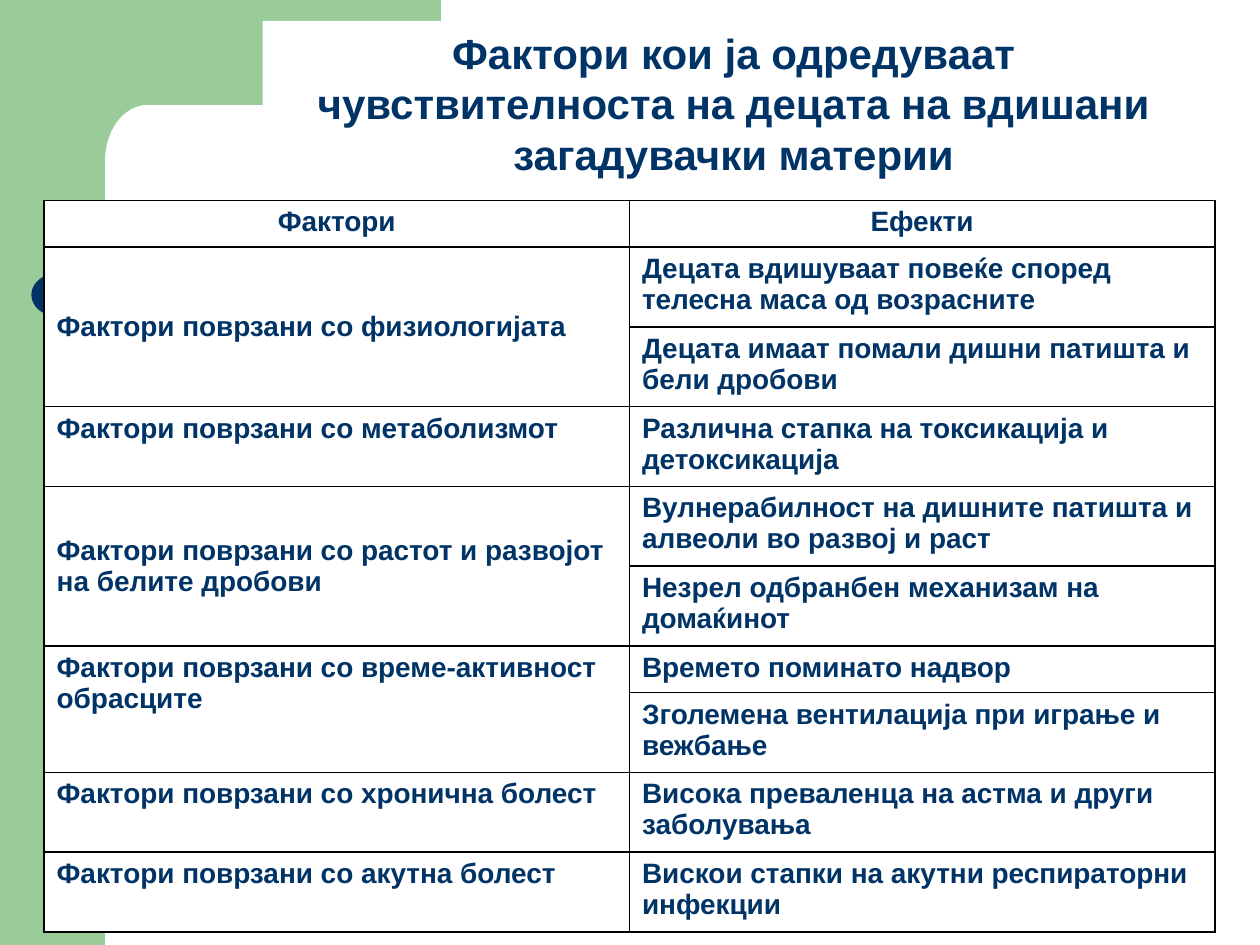
from math import cos, pi, sin

from lxml.etree import SubElement
from pptx import Presentation
from pptx.dml.color import RGBColor
from pptx.enum.shapes import MSO_SHAPE as Shape
from pptx.enum.text import MSO_ANCHOR as Anchor, MSO_AUTO_SIZE as AutoSize, PP_ALIGN as Align
from pptx.oxml.ns import qn
from pptx.util import Pt

GREEN, NAVY, WHITE, BLACK = "99CC99", "003366", "FFFFFF", "000000"
TITLE = "Фактори кои ја одредуваат чувствителноста на децата на вдишани загадувачки материи"
HEADINGS = ("Фактори", "Ефекти")
GROUPS = [
    ("Фактори поврзани со физиологијата", Anchor.MIDDLE,
     ["Децата вдишуваат повеќе според телесна маса од возрасните",
      "Децата имаат помали дишни патишта и бели дробови"]),
    ("Фактори поврзани со метаболизмот", Anchor.TOP,
     ["Различна стапка на токсикација и детоксикација"]),
    ("Фактори поврзани со растот и развојот на белите дробови", Anchor.MIDDLE,
     ["Вулнерабилност на дишните патишта и алвеоли во развој и раст",
      "Незрел одбранбен механизам на домаќинот"]),
    ("Фактори поврзани со време-активност обрасците", Anchor.TOP,
     ["Времето поминато надвор",
      "Зголемена вентилација при играње и вежбање"]),
    ("Фактори поврзани со хронична болест", Anchor.TOP,
     ["Висока преваленца на астма и други заболувања"]),
    ("Фактори поврзани со акутна болест", Anchor.TOP,
     ["Вискои стапки на акутни респираторни инфекции"]),
]
SHORT_ROW, TALL_ROW = 26.7, 45.6
ONE_LINE = {HEADINGS[1], "Времето поминато надвор"}


def color(value):
    """Turn a hex string into a colour."""
    return RGBColor.from_string(value)


def paint(shape, fill):
    """Give a shape a plain fill with no line and no shadow."""
    shape.shadow.inherit = False
    shape.fill.solid()
    shape.fill.fore_color.rgb = color(fill)
    shape.line.fill.background()


def write(frame, text, size, align):
    """Write one bold navy paragraph."""
    frame.text = text
    para = frame.paragraphs[0]
    para.alignment = align
    font = para.runs[0].font
    font.name, font.size, font.bold = "Arial", Pt(size), True
    font.color.rgb = color(NAVY)


def add_backdrop(page, left, top, width, height):
    """Draw the green side band, its rounded corner and the navy tab."""
    band = page.shapes.add_shape(Shape.RECTANGLE, Pt(left), Pt(top), Pt(width), Pt(height))
    paint(band, GREEN)
    inner, radius, steps = left + width, 24, 12
    edge = top + 60
    arc = [(inner + radius * (1 - sin(pi / 2 * step / steps)),
            edge + 32 * (1 - cos(pi / 2 * step / steps))) for step in range(steps + 1)]
    points = [(left + 252, top), (left + 252, edge)] + arc[::-1][-steps - 1:]
    points = [(left + 252, top), (left + 252, edge)]
    points += [(inner + radius * (1 - sin(pi / 2 * step / steps)),
                edge + 32 * (1 - cos(pi / 2 * step / steps))) for step in range(steps + 1)]
    points = points[:2] + sorted(points[2:], key=lambda point: point[1])
    points += [(left + 36, edge + 32), (left + 36, top)]
    builder = page.shapes.build_freeform(Pt(points[0][0]), Pt(points[0][1]))
    builder.add_line_segments([(Pt(x), Pt(y)) for x, y in points[1:]])
    paint(builder.convert_to_shape(), GREEN)
    tab = page.shapes.add_shape(Shape.FLOWCHART_DELAY, Pt(left + 18), Pt(top + 156), Pt(31), Pt(25))
    paint(tab, NAVY)
    tab.element.spPr.xfrm.set("flipH", "1")


def set_borders(cell):
    """Outline a cell with thin black lines."""
    properties = cell._tc.get_or_add_tcPr()
    for index, side in enumerate(("lnL", "lnR", "lnT", "lnB")):
        line = properties.makeelement(qn(f"a:{side}"), {"w": str(Pt(1))})
        fill = SubElement(line, qn("a:solidFill"))
        SubElement(fill, qn("a:srgbClr"), val=BLACK)
        properties.insert(index, line)


def fill_cell(cell, text, align=Align.LEFT, anchor=Anchor.TOP):
    """Write and anchor the text of a cell."""
    write(cell.text_frame, text, 16, align)
    cell.vertical_anchor = anchor


def add_factor_table(page, left, top, width):
    """Build the table of factors, merging each factor over its effects."""
    effects = [HEADINGS[1]] + [effect for group in GROUPS for effect in group[2]]
    heights = [SHORT_ROW if effect in ONE_LINE else TALL_ROW for effect in effects]
    frame = page.shapes.add_table(len(effects), 2, Pt(left), Pt(top), Pt(width), Pt(sum(heights)))
    table = frame.table
    for column in table.columns:
        column.width = Pt(width / 2)
    for row, height in zip(table.rows, heights):
        row.height = Pt(height)
    for cell in table.iter_cells():
        cell.fill.solid()
        cell.fill.fore_color.rgb = color(WHITE)
        set_borders(cell)
    for index, heading in enumerate(HEADINGS):
        fill_cell(table.cell(0, index), heading, Align.CENTER)
    start = 1
    for factor, anchor, group_effects in GROUPS:
        end = start + len(group_effects)
        if len(group_effects) > 1:
            table.cell(start, 0).merge(table.cell(end - 1, 0))
        fill_cell(table.cell(start, 0), factor, anchor=anchor)
        for row, effect in enumerate(group_effects, start):
            fill_cell(table.cell(row, 1), effect)
        start = end


def place_title(page, left, top, width, height):
    """Move the title placeholder to the front and format it."""
    title = page.shapes.title
    title.left, title.top, title.width, title.height = Pt(left), Pt(top), Pt(width), Pt(height)
    title.fill.solid()
    title.fill.fore_color.rgb = color(WHITE)
    frame = title.text_frame
    frame.word_wrap = True
    frame.auto_size = AutoSize.NONE
    frame.vertical_anchor = Anchor.TOP
    write(frame, TITLE, 24, Align.CENTER)
    title.element.getparent().append(title.element)


def main():
    """Build the slide and save it."""
    deck = Presentation()
    deck.slide_width, deck.slide_height = Pt(720), Pt(540)
    page = deck.slides.add_slide(deck.slide_layouts[5])
    add_backdrop(page, 0, 0, 60, 540)
    add_factor_table(page, 25.2, 114.5, 669)
    place_title(page, 150, 12, 538.5, 94.5)
    deck.save("out.pptx")


if __name__ == "__main__":
    main()
